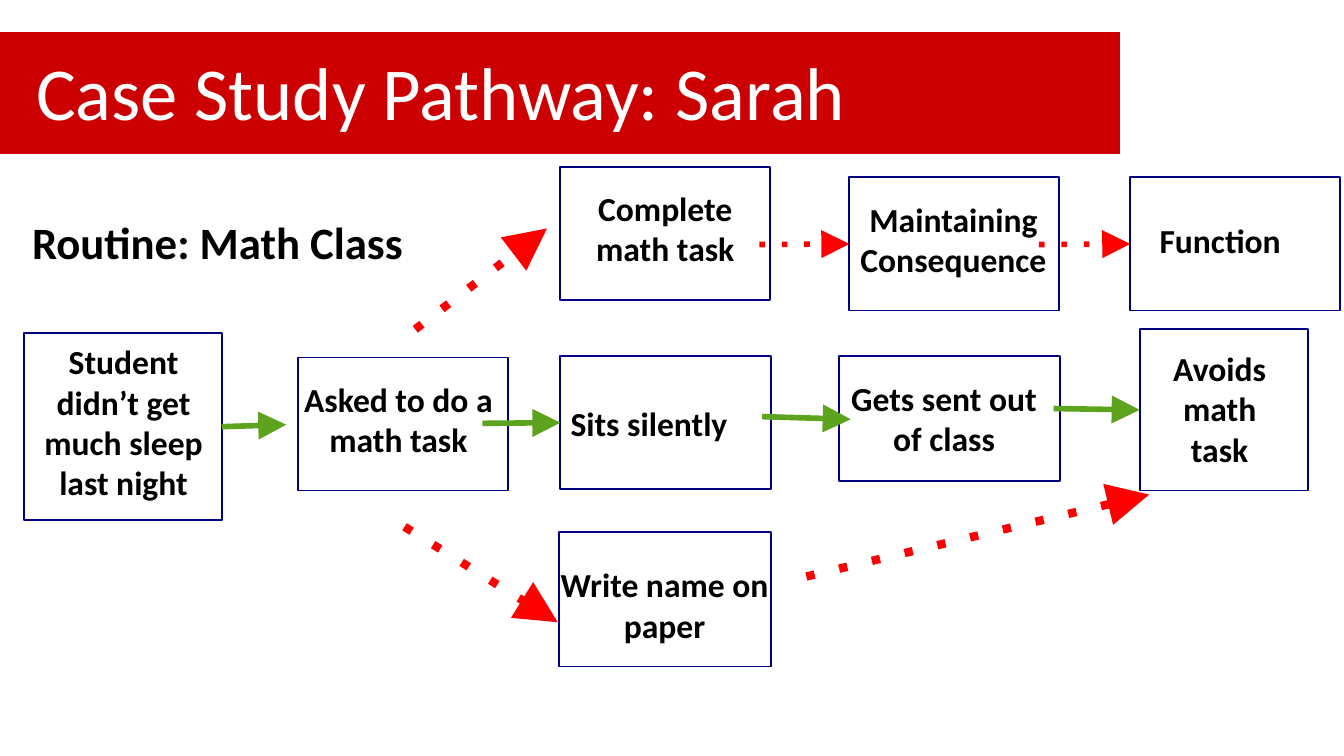
from lxml.etree import SubElement
from pptx import Presentation
from pptx.dml.color import RGBColor
from pptx.enum.dml import MSO_LINE
from pptx.enum.shapes import MSO_CONNECTOR, MSO_SHAPE
from pptx.enum.text import MSO_ANCHOR, PP_ALIGN
from pptx.oxml.ns import qn
from pptx.util import Emu, Pt

PX = 9144
RED, GREEN, NAVY, BLACK, WHITE = "FF0000", "5DA31E", "000080", "000000", "FFFFFF"
LEFT_SIDE, RIGHT_SIDE = 1, 3

# name: (outline box, label box relative to the outline, label, alignment)
STEPS = {
    "setting": ((18, 248, 147, 139), (-1, 1, 150, 133),
                "Student didn’t get much sleep last night", PP_ALIGN.CENTER),
    "antecedent": ((222, 266, 156, 99), (-9, 11, 167, 77),
                   "Asked to do a math task", PP_ALIGN.CENTER),
    "behavior": ((417, 265, 157, 99), (-9, 30, 150, 40),
                 "Sits silently", PP_ALIGN.CENTER),
    "consequence": ((624, 265, 165, 93), (-8, 11, 173, 72),
                    "Gets sent out of class", PP_ALIGN.CENTER),
    "outcome": ((848, 245, 125, 120), (0, 9, 119, 100),
                "Avoids math task", PP_ALIGN.CENTER),
    "desired": ((417, 124, 156, 99), (-1, 11, 158, 77),
                "Complete math task", PP_ALIGN.CENTER),
    "maintaining": ((632, 132, 156, 99), (-14, 11, 183, 77),
                    "Maintaining\nConsequence", PP_ALIGN.CENTER),
    "function": ((841, 132, 156, 99), (12, 27, 133, 44),
                 "Function", PP_ALIGN.LEFT),
    "alternative": ((416, 396, 158, 100), (-17, 19, 191, 77),
                    "Write name on paper", PP_ALIGN.CENTER),
}

# (start, end, colour, width, step joined at start, step joined at end)
ARROWS = [
    ((166, 317), (213, 316), GREEN, 3, "setting", None),
    ((359, 315), (415, 313), GREEN, 3, None, "behavior"),
    ((567, 310), (633, 312), GREEN, 3, None, None),
    ((784, 304), (848, 304), GREEN, 3, None, "outcome"),
    ((309, 245), (407, 170), RED, 4.5, None, None),
    ((301, 392), (415, 463), RED, 4.5, None, None),
    ((600, 429), (855, 368), RED, 4.5, None, None),
    ((565, 182), (635, 181), RED, 3, None, "maintaining"),
    ((773, 182), (844, 181), RED, 3, None, "function"),
]


def px(*lengths):
    """Turn px lengths into EMU."""
    return [Emu(length * PX) for length in lengths]


def colour(hex_string):
    """Turn a hex string into a colour."""
    return RGBColor.from_string(hex_string)


def within(box, offset):
    """Place an offset box relative to the corner of another box."""
    left, top, width, height = offset
    return box[0] + left, box[1] + top, width, height


def add_rectangle(slide, box, line, width, fill=None):
    """Add a flat rectangle, hollow unless a fill is given."""
    shape = slide.shapes.add_shape(MSO_SHAPE.RECTANGLE, *px(*box))
    shape.shadow.inherit = False
    if fill:
        shape.fill.solid()
        shape.fill.fore_color.rgb = colour(fill)
    else:
        shape.fill.background()
    shape.line.color.rgb = colour(line)
    shape.line.width = Pt(width)
    return shape


def add_label(slide, box, text, size, bold=True, text_colour=BLACK,
              alignment=PP_ALIGN.LEFT, anchor=MSO_ANCHOR.TOP):
    """Add wrapped text with one paragraph for each line."""
    frame = slide.shapes.add_textbox(*px(*box)).text_frame
    frame.word_wrap = True
    frame.vertical_anchor = anchor
    frame.text = text
    for paragraph in frame.paragraphs:
        paragraph.alignment = alignment
        paragraph.font.name = "Calibri"
        paragraph.font.size = Pt(size)
        paragraph.font.bold = bold
        paragraph.font.color.rgb = colour(text_colour)


def add_title(slide, box, text):
    """Add the red band and its title."""
    add_rectangle(slide, box, WHITE, 0.75, "CC0000")
    add_label(slide, within(box, (25, 4, 817, 81)), text, 40, bold=False,
              text_colour=WHITE, anchor=MSO_ANCHOR.MIDDLE)


def add_step(slide, box, label_box, text, alignment):
    """Add one outlined step of the pathway and return its outline."""
    outline = add_rectangle(slide, box, NAVY, 1)
    add_label(slide, within(box, label_box), text, 18, alignment=alignment)
    return outline


def add_arrow(slide, start, end, line_colour, width, source, target):
    """Add an arrow, dotted when red, joined to the given outlines."""
    connector = slide.shapes.add_connector(
        MSO_CONNECTOR.STRAIGHT, *px(*start, *end))
    if source:
        connector.begin_connect(source, RIGHT_SIDE)
    if target:
        connector.end_connect(target, LEFT_SIDE)
    connector.line.color.rgb = colour(line_colour)
    connector.line.width = Pt(width)
    if line_colour == RED:
        connector.line.dash_style = MSO_LINE.ROUND_DOT
        dash = connector.line._ln.find(qn("a:prstDash"))
        dash.set("val", "dot")
    SubElement(connector.line._ln, qn("a:tailEnd"),
               type="triangle", w="lg", len="lg")
    SubElement(connector._element.spPr, qn("a:effectLst"))


def add_pathway(slide):
    """Add every step and the arrows between them."""
    outlines = {name: add_step(slide, *step) for name, step in STEPS.items()}
    for *placing, source, target in ARROWS:
        add_arrow(slide, *placing, outlines.get(source), outlines.get(target))


def main():
    """Build and save the slide."""
    presentation = Presentation()
    presentation.slide_width = Emu(1000 * PX)
    presentation.slide_height = Emu(presentation.slide_width * 9 // 16)
    slide = presentation.slides.add_slide(presentation.slide_layouts[6])
    add_title(slide, (-8, 23, 842, 92), "Case Study Pathway: Sarah")
    add_label(slide, (14, 155, 350, 47), "Routine: Math Class", 24)
    add_pathway(slide)
    presentation.save("out.pptx")


if __name__ == "__main__":
    main()
